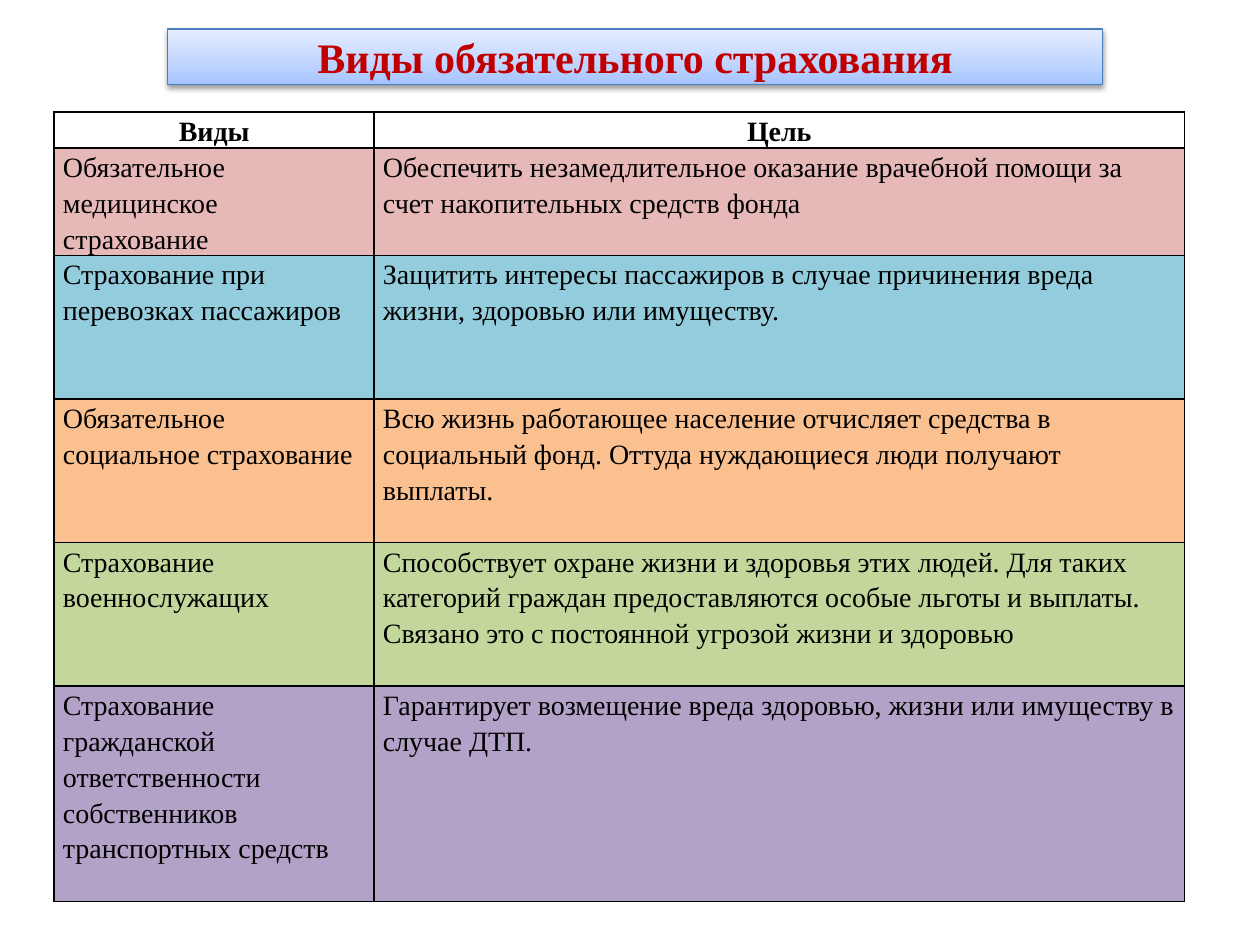
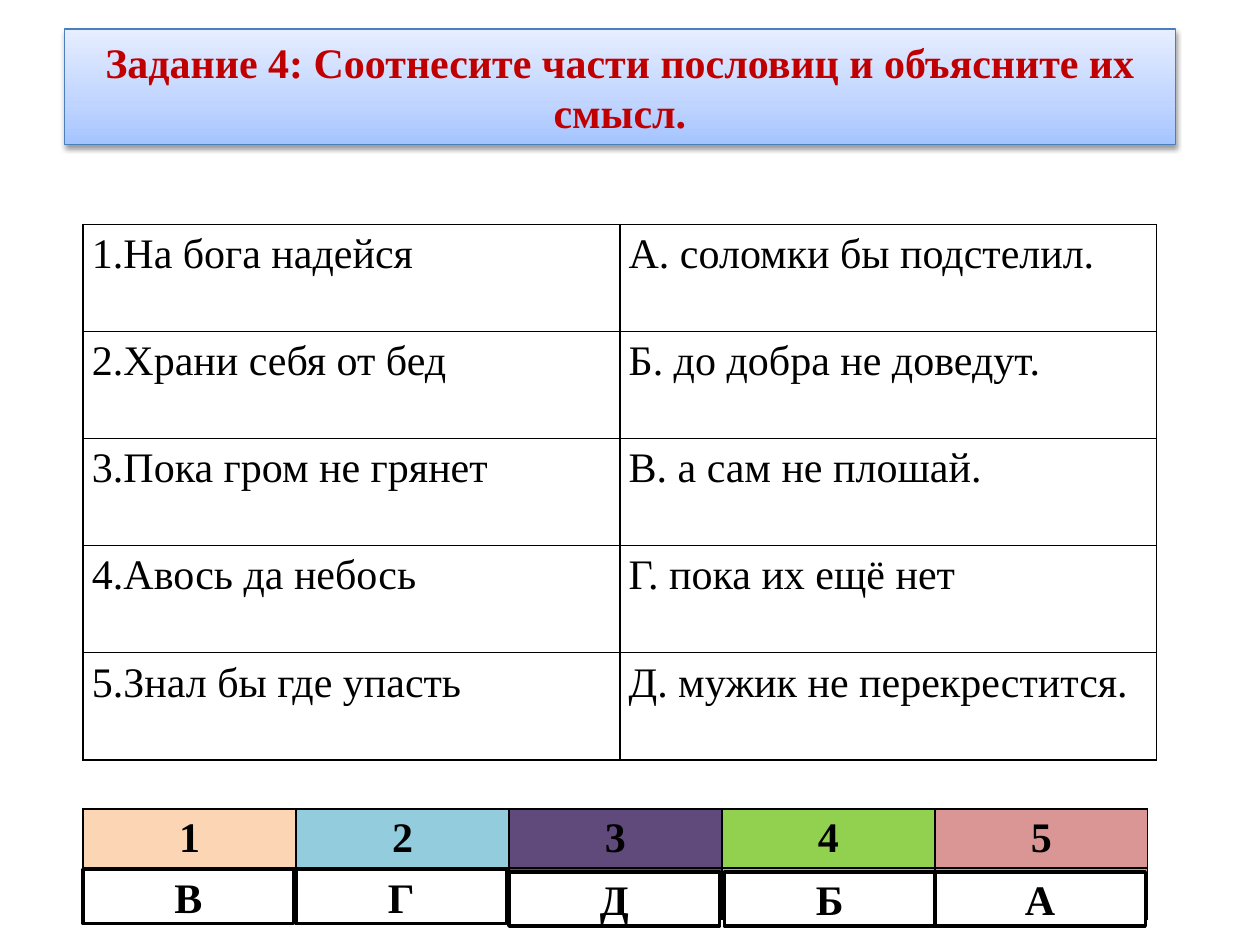
from dataclasses import dataclass

from lxml.etree import SubElement
from pptx import Presentation
from pptx.dml.color import RGBColor
from pptx.enum.shapes import MSO_SHAPE
from pptx.enum.text import MSO_ANCHOR, MSO_AUTO_SIZE, PP_ALIGN
from pptx.oxml import parse_xml
from pptx.oxml.ns import nsdecls, qn
from pptx.util import Inches, Pt


@dataclass(frozen=True)
class Theme:
    font: str = "Times New Roman"
    title_color: str = "C00000"
    title_line: str = "4B7EBC"
    title_stops: tuple = ((0, "A4C4FF"), (35, "BFD4FF"), (100, "E6EEFF"))
    ink: str = "000000"
    paper: str = "FFFFFF"
    large: int = 24
    small: int = 16
    cell_spacing: float = 1.15
    kind_colors: tuple = ("E6B9B8", "93CDDD", "FAC090", "C3D69B", "B3A2C7")
    answer_colors: tuple = ("FCD5B5", "93CDDD", "604A7B", "92D050", "D99694")


theme = Theme()


def write_text(frame, text, size=theme.large, color=theme.ink, bold=False,
               align=PP_ALIGN.LEFT, spacing=None):
    frame.word_wrap = True
    para = frame.paragraphs[0]
    para.alignment = align
    para.line_spacing = spacing
    span = para.add_run()
    span.text = text
    span.font.name = theme.font
    span.font.size = Pt(size)
    span.font.bold = bold
    span.font.color.rgb = RGBColor.from_string(color)


def add_grid(page, left, top, widths, heights, fills):
    frame = page.shapes.add_table(len(heights), len(widths), Inches(left), Inches(top),
                                  Inches(sum(widths)), Inches(sum(heights)))
    table = frame.table
    table.first_row = False
    table.horz_banding = False
    for column, width in zip(table.columns, widths):
        column.width = Inches(width)
    for row, height, colors in zip(table.rows, heights, fills):
        row.height = Inches(height)
        for cell, color in zip(row.cells, colors):
            cell.margin_left = cell.margin_right = Inches(0.07)
            cell.margin_top = cell.margin_bottom = 0
            properties = cell._tc.get_or_add_tcPr()
            for side in ("lnL", "lnR", "lnT", "lnB"):
                border = SubElement(properties, qn(f"a:{side}"), w=str(Pt(1)))
                solid = SubElement(border, qn("a:solidFill"))
                SubElement(solid, qn("a:srgbClr"), val=theme.ink)
            if color:
                cell.fill.solid()
                cell.fill.fore_color.rgb = RGBColor.from_string(color)
            else:
                cell.fill.background()
    return table


deck = Presentation()
deck.slide_width = Inches(10)
deck.slide_height = Inches(7.5)

titles = [
    ("Виды обязательного страхования", 1.33, 7.42, 0.44),
    ("Задание 4: Соотнесите части пословиц и объясните их смысл.", 0.51, 8.82, 0.92),
]
stops = "".join(f'<a:gs pos="{place * 1000}"><a:srgbClr val="{color}"/></a:gs>'
                for place, color in theme.title_stops)
pages = []
for text, left, width, height in titles:
    page = deck.slides.add_slide(deck.slide_layouts[5])
    pages.append(page)
    title = page.shapes.title
    title.left, title.top = Inches(left), Inches(0.23)
    title.width, title.height = Inches(width), Inches(height)
    title._element.spPr.append(parse_xml(
        f'<a:gradFill {nsdecls("a")} rotWithShape="1"><a:gsLst>{stops}</a:gsLst>'
        '<a:lin ang="16200000" scaled="0"/></a:gradFill>'))
    title.line.color.rgb = RGBColor.from_string(theme.title_line)
    title.line.width = Pt(0.75)
    title._element.spPr.append(parse_xml(
        f'<a:effectLst {nsdecls("a")}><a:outerShdw blurRad="{Pt(3.1)}" dist="{Pt(1.6)}" '
        f'dir="5400000" rotWithShape="0"><a:srgbClr val="{theme.ink}">'
        '<a:alpha val="38000"/></a:srgbClr></a:outerShdw></a:effectLst>'))
    title.text_frame.auto_size = MSO_AUTO_SIZE.NONE
    title.text_frame.vertical_anchor = MSO_ANCHOR.MIDDLE
    write_text(title.text_frame, text, color=theme.title_color, bold=True,
               align=PP_ALIGN.CENTER)

kinds_page, proverbs_page = pages

kinds = [
    ("Виды", "Цель"),
    ("Обязательное медицинское страхование",
     "Обеспечить незамедлительное оказание врачебной помощи за счет накопительных "
     "средств фонда"),
    ("Страхование при перевозках пассажиров",
     "Защитить интересы пассажиров в случае причинения вреда жизни, здоровью или "
     "имуществу."),
    ("Обязательное социальное страхование",
     "Всю жизнь работающее население отчисляет средства в социальный фонд. Оттуда "
     "нуждающиеся люди получают выплаты."),
    ("Страхование военнослужащих",
     "Способствует охране жизни и здоровья этих людей. Для таких категорий граждан "
     "предоставляются особые льготы и выплаты. Связано это с постоянной угрозой жизни "
     "и здоровью"),
    ("Страхование гражданской ответственности собственников транспортных средств",
     "Гарантирует возмещение вреда здоровью, жизни или имуществу в случае ДТП."),
]
kind_fills = [(None, None)] + [(color, color) for color in theme.kind_colors]
kinds_table = add_grid(kinds_page, 0.43, 0.89, (2.54, 6.43),
                       (0.28, 0.85, 1.14, 1.14, 1.14, 1.71), kind_fills)
for index, (row, texts) in enumerate(zip(kinds_table.rows, kinds)):
    heading = index == 0
    for cell, text in zip(row.cells, texts):
        write_text(cell.text_frame, text, size=theme.small, bold=heading,
                   align=PP_ALIGN.CENTER if heading else PP_ALIGN.LEFT,
                   spacing=theme.cell_spacing)

proverbs = [
    ("1.На бога надейся", "A. соломки бы подстелил."),
    ("2.Храни себя от бед", "Б. до добра не доведут."),
    ("3.Пока гром не грянет", "В. а сам не плошай."),
    ("4.Авось да небось", "Г. пока их ещё нет"),
    ("5.Знал бы где упасть", "Д. мужик не перекрестится."),
]
proverbs_table = add_grid(proverbs_page, 0.66, 1.78, [4.26] * 2, [0.85] * 5,
                          [(None, None)] * 5)
for row, texts in zip(proverbs_table.rows, proverbs):
    for cell, text in zip(row.cells, texts):
        write_text(cell.text_frame, text, spacing=theme.cell_spacing)

answers_table = add_grid(proverbs_page, 0.66, 6.42, [1.69] * 5, (0.47, 0.41),
                         [theme.answer_colors] * 2)
for number, cell in enumerate(answers_table.rows[0].cells, start=1):
    cell.margin_top = cell.margin_bottom = Inches(0.05)
    write_text(cell.text_frame, str(number), bold=True, align=PP_ALIGN.CENTER)

answers = [("В", 0.66, 6.9), ("Г", 2.35, 6.9), ("Д", 4.04, 6.92),
           ("Б", 5.75, 6.92), ("А", 7.42, 6.92)]
for letter, left, top in answers:
    box = proverbs_page.shapes.add_shape(MSO_SHAPE.RECTANGLE, Inches(left), Inches(top),
                                         Inches(1.67), Inches(0.43))
    box.shadow.inherit = False
    box.fill.solid()
    box.fill.fore_color.rgb = RGBColor.from_string(theme.paper)
    box.line.color.rgb = RGBColor.from_string(theme.ink)
    box.line.width = Pt(2)
    box.text_frame.vertical_anchor = MSO_ANCHOR.MIDDLE
    write_text(box.text_frame, letter, bold=True, align=PP_ALIGN.CENTER)

deck.save("out.pptx")
